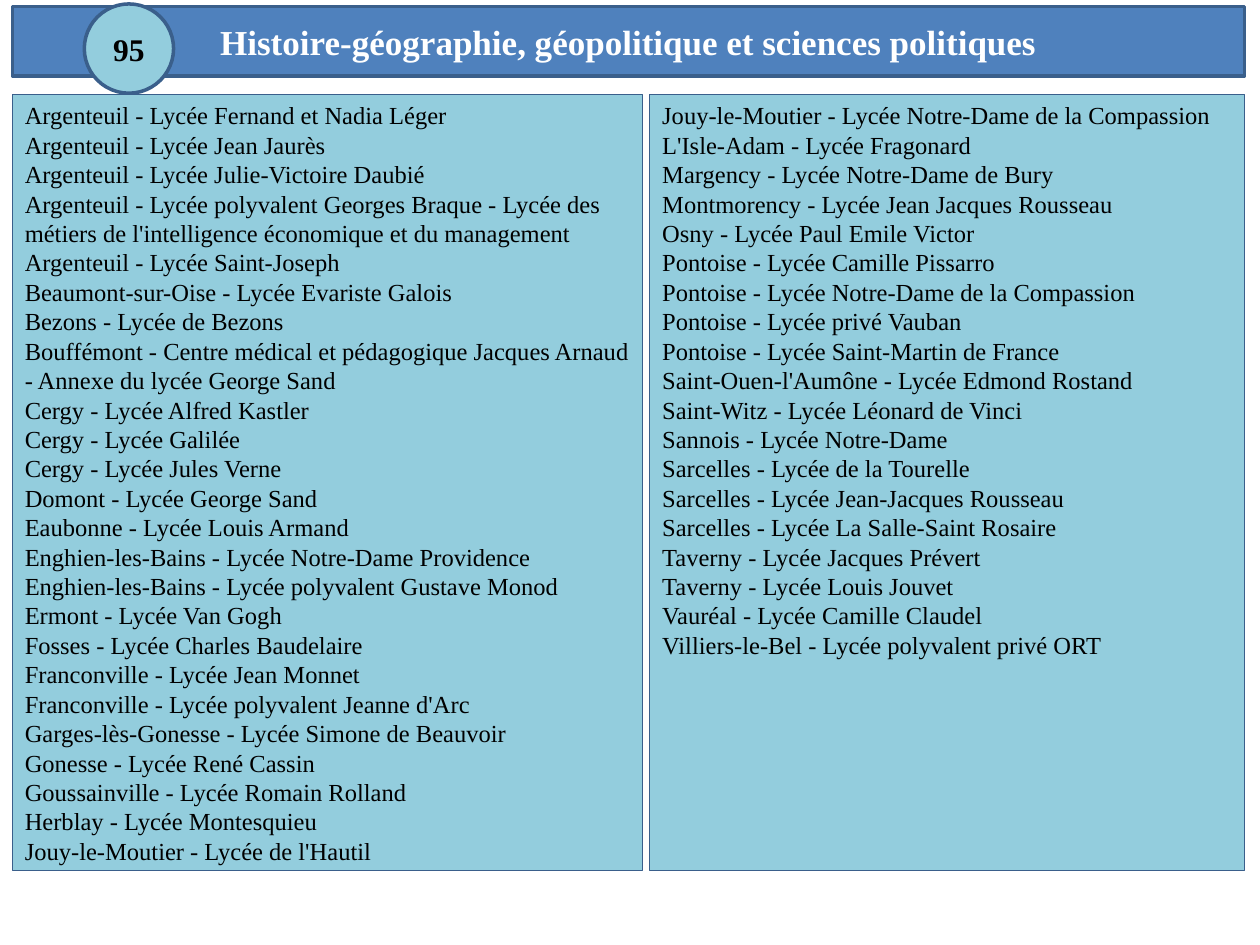
from pptx import Presentation
from pptx.dml.color import RGBColor
from pptx.enum.shapes import MSO_SHAPE
from pptx.enum.text import MSO_ANCHOR, PP_ALIGN
from pptx.util import Cm, Pt

RECT, OVAL = MSO_SHAPE.RECTANGLE, MSO_SHAPE.OVAL
TOP, MIDDLE = MSO_ANCHOR.TOP, MSO_ANCHOR.MIDDLE
LEFT, CENTER = PP_ALIGN.LEFT, PP_ALIGN.CENTER

BLUE = RGBColor(0x4F, 0x81, 0xBD)
AQUA = RGBColor(0x93, 0xCD, 0xDD)
NAVY = RGBColor(0x3A, 0x5F, 0x8B)
WHITE = RGBColor(0xFF, 0xFF, 0xFF)
BLACK = RGBColor(0x00, 0x00, 0x00)
FONT = "Times New Roman"

WEST = [
    "Argenteuil - Lycée Fernand et Nadia Léger",
    "Argenteuil - Lycée Jean Jaurès",
    "Argenteuil - Lycée Julie-Victoire Daubié",
    "Argenteuil - Lycée polyvalent Georges Braque - Lycée des métiers "
    "de l'intelligence économique et du management",
    "Argenteuil - Lycée Saint-Joseph",
    "Beaumont-sur-Oise - Lycée Evariste Galois",
    "Bezons - Lycée de Bezons",
    "Bouffémont - Centre médical et pédagogique Jacques Arnaud "
    "- Annexe du lycée George Sand",
    "Cergy - Lycée Alfred Kastler",
    "Cergy - Lycée Galilée",
    "Cergy - Lycée Jules Verne",
    "Domont - Lycée George Sand",
    "Eaubonne - Lycée Louis Armand",
    "Enghien-les-Bains - Lycée Notre-Dame Providence",
    "Enghien-les-Bains - Lycée polyvalent Gustave Monod",
    "Ermont - Lycée Van Gogh",
    "Fosses - Lycée Charles Baudelaire",
    "Franconville - Lycée Jean Monnet",
    "Franconville - Lycée polyvalent Jeanne d'Arc",
    "Garges-lès-Gonesse - Lycée Simone de Beauvoir",
    "Gonesse - Lycée René Cassin",
    "Goussainville - Lycée Romain Rolland",
    "Herblay - Lycée Montesquieu",
    "Jouy-le-Moutier - Lycée de l'Hautil",
]

EAST = [
    "Jouy-le-Moutier - Lycée Notre-Dame de la Compassion",
    "L'Isle-Adam - Lycée Fragonard",
    "Margency - Lycée Notre-Dame de Bury",
    "Montmorency - Lycée Jean Jacques Rousseau",
    "Osny - Lycée Paul Emile Victor",
    "Pontoise - Lycée Camille Pissarro",
    "Pontoise - Lycée Notre-Dame de la Compassion",
    "Pontoise - Lycée privé Vauban",
    "Pontoise - Lycée Saint-Martin de France",
    "Saint-Ouen-l'Aumône - Lycée Edmond Rostand",
    "Saint-Witz - Lycée Léonard de Vinci",
    "Sannois - Lycée Notre-Dame",
    "Sarcelles - Lycée de la Tourelle",
    "Sarcelles - Lycée Jean-Jacques Rousseau",
    "Sarcelles - Lycée La Salle-Saint Rosaire",
    "Taverny - Lycée Jacques Prévert",
    "Taverny - Lycée Louis Jouvet",
    "Vauréal - Lycée Camille Claudel",
    "Villiers-le-Bel - Lycée polyvalent privé ORT",
]

prs = Presentation()
prs.slide_width, prs.slide_height = Cm(25.4), Cm(19.05)
slide = prs.slides.add_slide(prs.slide_layouts[6])


def add_box(kind, area, fill, line, text, size, color, bold, align, anchor):
    """Add a filled shape; area is left, top, width, height in cm."""
    box = slide.shapes.add_shape(kind, *[Cm(side) for side in area])
    box.shadow.inherit = False
    box.fill.solid()
    box.fill.fore_color.rgb = fill
    box.line.color.rgb = NAVY
    box.line.width = Pt(line)
    frame = box.text_frame
    frame.word_wrap = True
    frame.vertical_anchor = anchor
    frame.text = text
    for para in frame.paragraphs:
        para.alignment = align
        for run in para.runs:
            font = run.font
            font.name, font.size, font.bold = FONT, Pt(size), bold
            font.color.rgb = color
    return box


title = add_box(RECT, (0.25, 0.13, 24.84, 1.4), BLUE, 2,
                "Histoire-géographie, géopolitique et sciences politiques",
                20, WHITE, True, CENTER, MIDDLE)
title.text_frame.paragraphs[0].space_before = Pt(4)

add_box(OVAL, (1.7, 0.08, 1.8, 1.8), AQUA, 2,
        "95", 18, BLACK, True, CENTER, MIDDLE)

for left, width, schools in ((0.25, 12.7, WEST), (13.1, 11.99, EAST)):
    add_box(RECT, (left, 1.9, width, 15.65), AQUA, 0.75,
            "\n".join(schools), 14, BLACK, False, LEFT, TOP)

prs.save("out.pptx")
